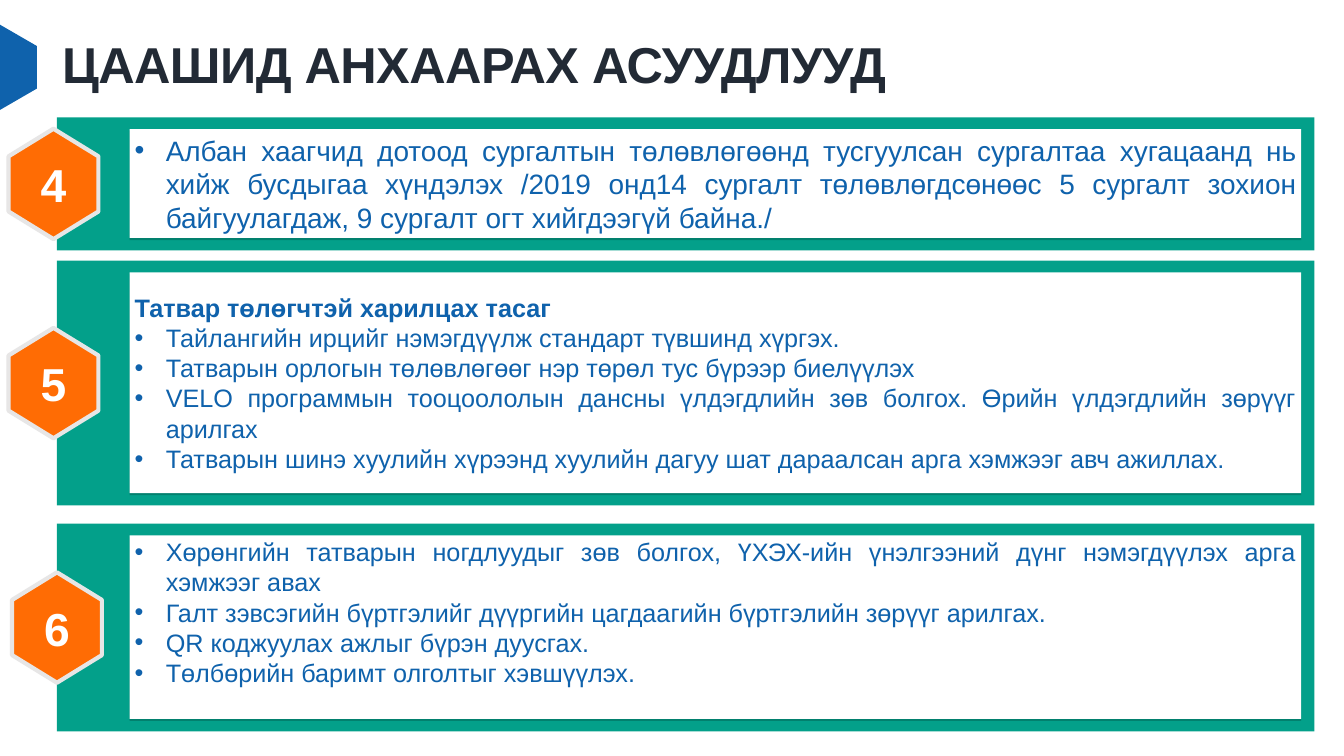
from collections import namedtuple

from lxml import etree
from pptx import Presentation
from pptx.dml.color import RGBColor
from pptx.enum.shapes import MSO_SHAPE
from pptx.enum.text import MSO_ANCHOR, PP_ALIGN
from pptx.oxml.ns import qn
from pptx.util import Inches, Pt

RECTANGLE = MSO_SHAPE.RECTANGLE
MIDDLE = MSO_ANCHOR.MIDDLE
LEFT, CENTER, JUSTIFY = PP_ALIGN.LEFT, PP_ALIGN.CENTER, PP_ALIGN.JUSTIFY

FONT = "Arial"
COLORS = {
    "blue": "0F62AC",
    "ink": "222A35",
    "green": "03A08A",
    "orange": "FF6C04",
    "edge": "E7E6E6",
    "white": "FFFFFF",
    "black": "000000",
}

# The page is a grid of 100 columns by 100 rows; boxes are given in those units.
WIDTH, HEIGHT = Inches(26.66), Inches(15)
COLUMN, ROW = WIDTH / 100, HEIGHT / 100
Box = namedtuple("Box", "left top width height")

TITLE_BOX = Box(4.24, 4.93, 80.83, 7.93)
ACCENT_BOX = Box(0, 3.27, 2.74, 11.27)
CARD_LEFT, CARD_WIDTH = 4.24, 93.55
BADGE_WIDTH, BADGE_HEIGHT = 6.68, 14.6
HEXAGON = [(0.5, 1), (0, 0.75), (0, 0.25), (0.5, 0), (1, 0.25), (1, 0.75)]
HALF_HEXAGON = [(0, 0), (1, 0.25), (1, 0.75), (0, 1)]
INDENT = Inches(0.62)

# Each item is (text, alignment) and gets a bullet; a heading is bold without one.
CARDS = [
    {
        "number": "4", "top": 15.53, "height": 17.6, "badge_left": 0.64, "size": 40,
        "items": [
            ("Албан хаагчид дотоод сургалтын төлөвлөгөөнд тусгуулсан сургалтаа "
             "хугацаанд нь хийж бусдыгаа хүндэлэх /2019 онд14 сургалт "
             "төлөвлөгдсөнөөс 5 сургалт зохион байгуулагдаж, 9 сургалт огт "
             "хийгдээгүй байна./", JUSTIFY),
        ],
    },
    {
        "number": "5", "top": 34.47, "height": 32.4, "badge_left": 0.64, "size": 36,
        "heading": "Татвар төлөгчтэй харилцах тасаг",
        "items": [
            ("Тайлангийн ирцийг нэмэгдүүлж стандарт түвшинд хүргэх.", JUSTIFY),
            ("Татварын орлогын төлөвлөгөөг нэр төрөл тус бүрээр биелүүлэх", JUSTIFY),
            ("VELO программын тооцоололын дансны үлдэгдлийн зөв болгох. "
             "Өрийн үлдэгдлийн зөрүүг арилгах", JUSTIFY),
            ("Татварын шинэ хуулийн хүрээнд хуулийн дагуу шат дараалсан арга "
             "хэмжээг авч ажиллах.", JUSTIFY),
        ],
    },
    {
        "number": "6", "top": 69.27, "height": 27.47, "badge_left": 0.9, "size": 36,
        "bottom_inset": 0.65,
        "items": [
            ("Хөрөнгийн татварын ногдлуудыг зөв болгох, ҮХЭХ-ийн үнэлгээний "
             "дүнг нэмэгдүүлэх арга хэмжээг авах", JUSTIFY),
            ("Галт зэвсэгийн бүртгэлийг дүүргийн цагдаагийн бүртгэлийн "
             "зөрүүг арилгах.", JUSTIFY),
            ("QR коджуулах ажлыг бүрэн дуусгах.", LEFT),
            ("Төлбөрийн баримт олголтыг хэвшүүлэх.", LEFT),
        ],
    },
]


def color(name):
    return RGBColor.from_string(COLORS[name])


def to_lengths(box):
    return (round(box.left * COLUMN), round(box.top * ROW),
            round(box.width * COLUMN), round(box.height * ROW))


def paint(shape, fill):
    shape.shadow.inherit = False
    shape.fill.solid()
    shape.fill.fore_color.rgb = color(fill)
    shape.line.fill.background()


def write(para, text, size, ink, bold=False, align=LEFT):
    para.text = text
    para.alignment = align
    font = para.runs[0].font
    font.name, font.size, font.bold = FONT, Pt(size), bold
    font.color.rgb = color(ink)


def add_bullet(para):
    properties = para._p.get_or_add_pPr()
    properties.set("marL", str(INDENT))
    properties.set("indent", str(-INDENT))
    etree.SubElement(properties, qn("a:buFont"), typeface=FONT)
    etree.SubElement(properties, qn("a:buChar"), char="•")


def add_drop_shadow(shape):
    """Give the shape a hard, faint shadow 3 points below it."""
    effects = shape._element.spPr.find(qn("a:effectLst"))
    shadow = etree.SubElement(effects, qn("a:outerShdw"), blurRad="0",
                              dist=str(Pt(3)), dir="5400000", rotWithShape="0")
    tint = etree.SubElement(shadow, qn("a:srgbClr"), val=COLORS["black"])
    etree.SubElement(tint, qn("a:alpha"), val="20000")


def add_rectangle(page, box, fill):
    shape = page.shapes.add_shape(RECTANGLE, *to_lengths(box))
    paint(shape, fill)
    return shape


def add_outline(page, box, corners, fill):
    """Draw a closed outline whose corners are shares of the box."""
    left, top, width, height = to_lengths(box)
    points = [(left + x * width, top + y * height) for x, y in corners]
    builder = page.shapes.build_freeform(*points[0])
    builder.add_line_segments(points[1:], close=True)
    shape = builder.convert_to_shape()
    paint(shape, fill)
    return shape


def add_title(page, box, text):
    title = page.shapes.title
    title.left, title.top, title.width, title.height = to_lengths(box)
    frame = title.text_frame
    frame.vertical_anchor = MIDDLE
    frame.word_wrap = True
    para = frame.paragraphs[0]
    write(para, text, 72, "ink", bold=True)
    para.line_spacing = 0.9
    para.runs[0].font._element.set("spc", "-80")


def add_badge(page, box, number):
    badge = add_outline(page, box, HEXAGON, "orange")
    badge.line.color.rgb = color("edge")
    badge.line.width = Pt(6)
    frame = badge.text_frame
    frame.word_wrap = False
    frame.vertical_anchor = MIDDLE
    write(frame.paragraphs[0], number, 66, "white", bold=True, align=CENTER)


def add_panel(page, box, card):
    panel = add_rectangle(page, box, "white")
    add_drop_shadow(panel)
    frame = panel.text_frame
    frame.word_wrap = True
    frame.vertical_anchor = MIDDLE
    frame.margin_bottom = Inches(card.get("bottom_inset", 0.05))
    para = frame.paragraphs[0]
    if "heading" in card:
        write(para, card["heading"], card["size"], "blue", bold=True, align=JUSTIFY)
        para = frame.add_paragraph()
    for index, (text, align) in enumerate(card["items"]):
        if index:
            para = frame.add_paragraph()
        write(para, text, card["size"], "blue", align=align)
        add_bullet(para)


def add_card(page, box, card):
    add_rectangle(page, box, "green")
    add_panel(page, Box(box.left + 5.4, box.top + 1.55,
                        box.width - 6.38, box.height - 3.2), card)
    badge_top = box.top + (box.height - BADGE_HEIGHT) / 2
    add_badge(page, Box(card["badge_left"], badge_top, BADGE_WIDTH, BADGE_HEIGHT),
              card["number"])


def main():
    deck = Presentation()
    deck.slide_width, deck.slide_height = WIDTH, HEIGHT
    page = deck.slides.add_slide(deck.slide_layouts.get_by_name("Title Only"))
    add_outline(page, ACCENT_BOX, HALF_HEXAGON, "blue")
    add_title(page, TITLE_BOX, "ЦААШИД АНХААРАХ АСУУДЛУУД")
    for card in CARDS:
        add_card(page, Box(CARD_LEFT, card["top"], CARD_WIDTH, card["height"]), card)
    deck.save("out.pptx")


if __name__ == "__main__":
    main()
